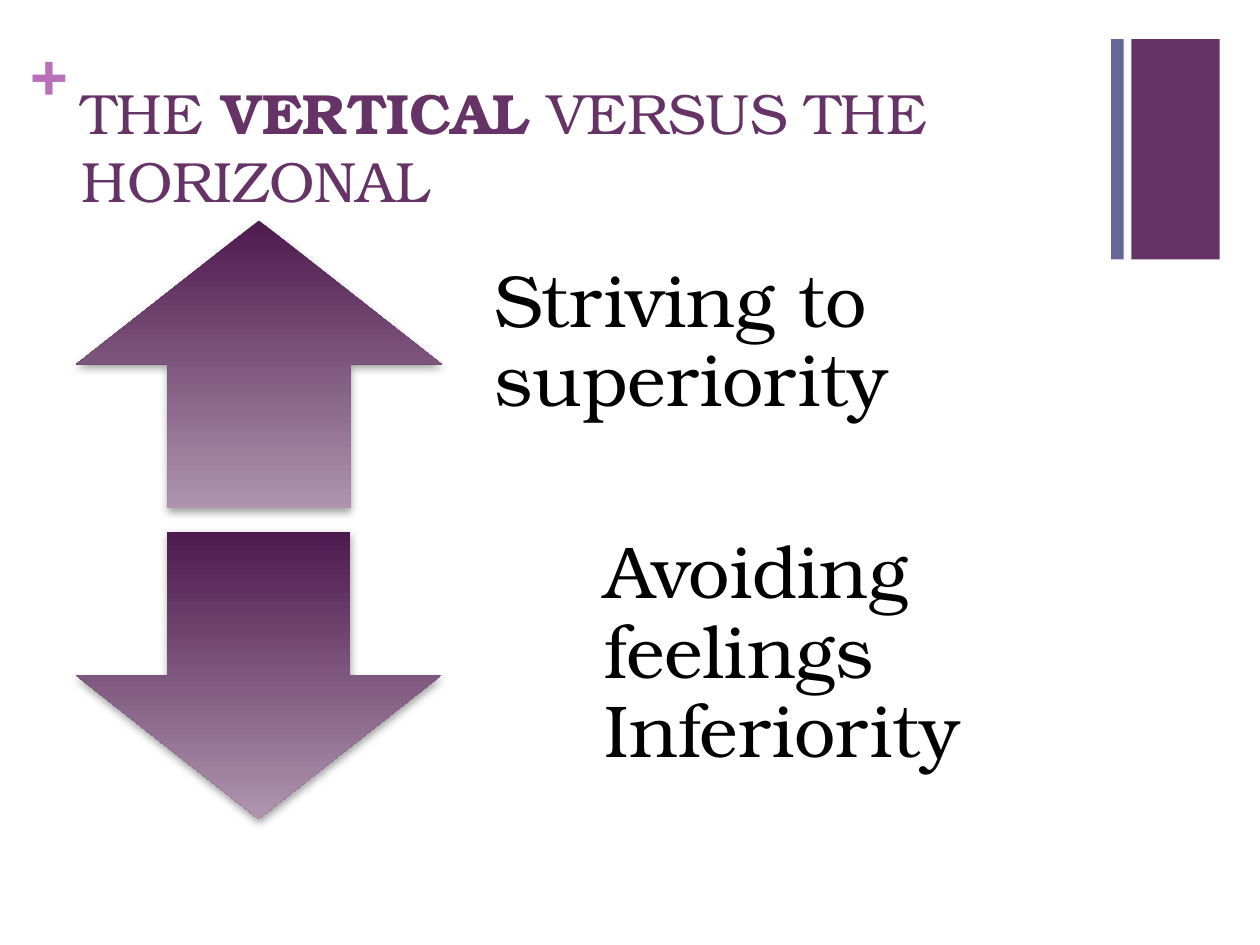
from lxml import etree
from pptx import Presentation
from pptx.dml.color import RGBColor
from pptx.enum.shapes import MSO_SHAPE as Shape
from pptx.enum.text import MSO_ANCHOR as Anchor, MSO_AUTO_SIZE as Fit, PP_ALIGN as Align
from pptx.oxml.ns import qn
from pptx.util import Pt

FONT = "TeX Gyre Bonum"
HEX = {"plum": "663366", "slate": "666699", "pink": "B870B8", "text": "000000",
       "dark": "4D1A4D", "pale": "AF94AF", "shade": "808080"}


def color(name):
    return RGBColor.from_string(HEX[name])


def style(para, size, name, bold=None):
    para.alignment = Align.LEFT
    font = para.font
    font.name, font.size, font.bold = FONT, Pt(size), bold
    font.color.rgb = color(name)


def inset(frame, left, top, right, bottom):
    frame.margin_left, frame.margin_top = Pt(left), Pt(top)
    frame.margin_right, frame.margin_bottom = Pt(right), Pt(bottom)


def add_text(shapes, box, text, size, name, bold=None):
    frame = shapes.add_textbox(*map(Pt, box)).text_frame
    para = frame.paragraphs[0]
    para.text = text
    style(para, size, name, bold)
    return frame


def cast_shade(shape):
    """Give the shape a soft shadow straight below it."""
    shape.shadow.inherit = False
    effects = shape._element.spPr.find(qn("a:effectLst"))
    outer = etree.SubElement(effects, qn("a:outerShdw"), blurRad=str(Pt(5)),
                             dist=str(Pt(2)), dir="5400000", rotWithShape="0")
    tint = etree.SubElement(outer, qn("a:srgbClr"), val=HEX["shade"])
    etree.SubElement(tint, qn("a:alpha"), val="75000")


def add_decor(shapes, left, top, height):
    """Draw the corner bars and the plus sign."""
    for shift, width, name in ((11.5, 50.5, "plum"), (0, 7.2, "slate")):
        bar = shapes.add_shape(Shape.RECTANGLE, Pt(left + shift), Pt(top),
                               Pt(width), Pt(height))
        bar.shadow.inherit = False
        bar.fill.solid()
        bar.fill.fore_color.rgb = color(name)
        bar.line.fill.background()
    frame = add_text(shapes, (17.3, 18, 20.9, 43.9), "+", 36, "pink", True)
    inset(frame, 0, 0, 0, 0)
    frame.auto_size = Fit.SHAPE_TO_FIT_TEXT


def set_title(title, left, top, width, height):
    title.left, title.top = Pt(left), Pt(top)
    title.width, title.height = Pt(width), Pt(height)
    frame = title.text_frame
    frame.word_wrap, frame.auto_size = True, Fit.NONE
    frame.vertical_anchor = Anchor.BOTTOM
    para = frame.paragraphs[0]
    style(para, 32.4, "plum")
    for text, bold in (("THE ", False), ("VERTICAL", True),
                       (" VERSUS THE HORIZONAL", False)):
        run = para.add_run()
        run.text, run.font.bold = text, bold


def add_row(shapes, kind, text, left, top, shift):
    """Place an arrow with its wording to the right, shifted from the arrow."""
    height = 164.2
    arrow = shapes.add_shape(kind, Pt(left), Pt(top), Pt(208.8), Pt(height))
    arrow.fill.gradient()
    arrow.fill.gradient_angle = 270
    for stop, name in zip(arrow.fill.gradient_stops, ("dark", "pale")):
        stop.color.rgb = color(name)
    arrow.line.fill.background()
    cast_shade(arrow)
    frame = add_text(shapes, (left + shift, top, 355, height), text, 42, "text")
    frame.word_wrap, frame.vertical_anchor = True, Anchor.MIDDLE
    inset(frame, 23.8, 0, 23.8, 23.8)
    frame.paragraphs[0].line_spacing = 0.9


def main():
    deck = Presentation()
    deck.slide_width, deck.slide_height = Pt(720), Pt(540)
    slide = deck.slides.add_slide(deck.slide_layouts[5])
    add_decor(slide.shapes, 635, 22.3, 126)
    set_title(slide.shapes.title, 39.6, 38.2, 594.7, 87.8)
    group = slide.shapes.add_group_shape()
    add_row(group.shapes, Shape.UP_ARROW, "Striving to superiority", 43.6, 126, 215)
    add_row(group.shapes, Shape.DOWN_ARROW, "Avoiding feelings Inferiority",
            43.4, 303.8, 278.4)
    deck.save("out.pptx")


if __name__ == "__main__":
    main()
